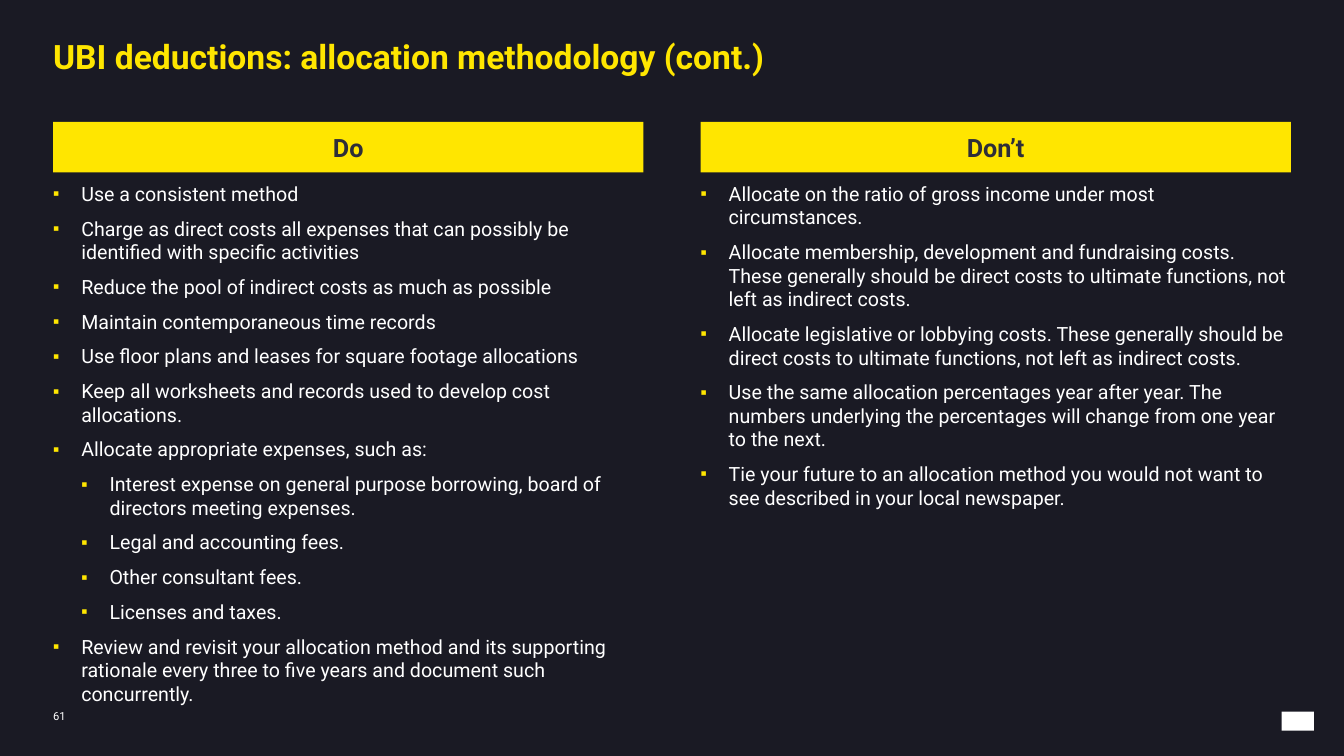
import dataclasses

import pptx
import pptx.dml.color
import pptx.enum.shapes
import pptx.enum.text
import pptx.util
from lxml import etree

ANCHOR = pptx.enum.text.MSO_ANCHOR
ALIGN = pptx.enum.text.PP_ALIGN


@dataclasses.dataclass(frozen=True)
class Theme:
    """Colours, font and type sizes of the deck."""
    background: str = "1A1A24"
    accent: str = "FFE600"
    dark: str = "2E2E38"
    light: str = "FFFFFF"
    font: str = "Roboto"
    title: int = 24
    heading: int = 18
    body: int = 14
    number: int = 8
    spacing: int = 4
    indent: float = 0.28
    bullet_percent: int = 80


@dataclasses.dataclass(frozen=True)
class Box:
    """A region in percent of the slide's width and height."""
    left: float
    top: float
    width: float
    height: float

    def emu(self, prs):
        """Return left, top, width and height in slide units."""
        w, h = prs.slide_width / 100, prs.slide_height / 100
        return [round(v) for v in (self.left * w, self.top * h, self.width * w, self.height * h)]


THEME = Theme()
CONTENT = Box(3.95, 16.13, 92.09, 72)
COLUMN_WIDTH = 43.92
HEADING_HEIGHT = 6.67
BODY_OFFSET = 7.92

TITLE = "UBI deductions: allocation methodology (cont.)"
DO = [
    (0, "Use a consistent method"),
    (0, "Charge as direct costs all expenses that can possibly be identified with specific activities"),
    (0, "Reduce the pool of indirect costs as much as possible"),
    (0, "Maintain contemporaneous time records"),
    (0, "Use floor plans and leases for square footage allocations"),
    (0, "Keep all worksheets and records used to develop cost allocations."),
    (0, "Allocate appropriate expenses, such as:"),
    (1, "Interest expense on general purpose borrowing, board of directors meeting expenses."),
    (1, "Legal and accounting fees."),
    (1, "Other consultant fees."),
    (1, "Licenses and taxes."),
    (0, "Review and revisit your allocation method and its supporting rationale every three to five "
        "years and document such concurrently."),
]
DONT = [
    (0, "Allocate on the ratio of gross income under most circumstances."),
    (0, "Allocate membership, development and fundraising costs. These generally should be direct "
        "costs to ultimate functions, not left as indirect costs."),
    (0, "Allocate legislative or lobbying costs. These generally should be direct costs to ultimate "
        "functions, not left as indirect costs."),
    (0, "Use the same allocation percentages year after year. The numbers underlying the percentages "
        "will change from one year to the next."),
    (0, "Tie your future to an allocation method you would not want to see described in your local "
        "newspaper."),
]


def rgb(value):
    """Return a colour object for a hex string."""
    return pptx.dml.color.RGBColor.from_string(value)


def set_frame(tf, inset=0.0, anchor=ANCHOR.TOP):
    """Set wrapping, insets and anchor of a text frame."""
    tf.word_wrap = True
    tf.auto_size = pptx.enum.text.MSO_AUTO_SIZE.NONE
    tf.vertical_anchor = anchor
    tf.margin_left = tf.margin_right = tf.margin_top = tf.margin_bottom = pptx.util.Inches(inset)


def add_run(p, text, size, color, bold=False):
    """Add one formatted run to a paragraph."""
    r = p.add_run()
    r.text = text
    r.font.name = THEME.font
    r.font.size = pptx.util.Pt(size)
    r.font.bold = bold
    r.font.color.rgb = rgb(color)


def set_bullet(p, level):
    """Give a paragraph a square accent bullet and a hanging indent."""
    p.level = level
    pPr = p._p.get_or_add_pPr()
    pPr.set("marL", str(pptx.util.Inches(THEME.indent * (level + 1))))
    pPr.set("indent", str(-pptx.util.Inches(THEME.indent)))
    ns = pptx.oxml.ns.qn
    color = etree.SubElement(pPr, ns("a:buClr"))
    etree.SubElement(color, ns("a:srgbClr"), val=THEME.accent)
    etree.SubElement(pPr, ns("a:buSzPct"), val=str(THEME.bullet_percent * 1000))
    etree.SubElement(pPr, ns("a:buFont"), typeface=THEME.font)
    etree.SubElement(pPr, ns("a:buChar"), char="▪")


def add_title(prs, s, box, text):
    """Place the title placeholder in its box."""
    sp = s.shapes.title
    sp.left, sp.top, sp.width, sp.height = box.emu(prs)
    set_frame(sp.text_frame)
    p = sp.text_frame.paragraphs[0]
    p.alignment = ALIGN.LEFT
    p.line_spacing = 0.85
    add_run(p, text, THEME.title, THEME.accent, True)


def add_bar(prs, s, box, color):
    """Draw a plain filled rectangle and return it."""
    sp = s.shapes.add_shape(pptx.enum.shapes.MSO_SHAPE.RECTANGLE, *box.emu(prs))
    sp.shadow.inherit = False
    sp.fill.solid()
    sp.fill.fore_color.rgb = rgb(color)
    sp.line.fill.background()
    return sp


def add_heading(prs, s, box, text):
    """Draw the filled bar above a column."""
    tf = add_bar(prs, s, box, THEME.accent).text_frame
    set_frame(tf, 0.1, ANCHOR.MIDDLE)
    p = tf.paragraphs[0]
    p.alignment = ALIGN.CENTER
    add_run(p, text, THEME.heading, THEME.dark, True)


def add_bullets(prs, s, box, items):
    """Write a bulleted list of (level, text) items."""
    tf = s.shapes.add_textbox(*box.emu(prs)).text_frame
    set_frame(tf)
    for i, (level, text) in enumerate(items):
        p = tf.add_paragraph() if i else tf.paragraphs[0]
        set_bullet(p, level)
        p.space_before = pptx.util.Pt(THEME.spacing if i else 0)
        p.space_after = pptx.util.Pt(THEME.spacing)
        add_run(p, text, THEME.body, THEME.light)


def add_column(prs, s, box, heading, items):
    """Stack a heading bar and its list inside a box."""
    add_heading(prs, s, Box(box.left, box.top, box.width, HEADING_HEIGHT), heading)
    body = Box(box.left, box.top + BODY_OFFSET, box.width, box.height - BODY_OFFSET)
    add_bullets(prs, s, body, items)


def add_page_number(prs, s, box, number):
    """Write the page number in its box."""
    tf = s.shapes.add_textbox(*box.emu(prs)).text_frame
    set_frame(tf)
    add_run(tf.paragraphs[0], number, THEME.number, THEME.light)


def add_comparison_slide(prs, title, columns, number):
    """Build a slide with a title and evenly spread columns."""
    s = prs.slides.add_slide(prs.slide_layouts[5])
    s.background.fill.solid()
    s.background.fill.fore_color.rgb = rgb(THEME.background)
    add_title(prs, s, Box(CONTENT.left, 5.6, CONTENT.width, 9.33), title)
    step = (CONTENT.width - COLUMN_WIDTH) / (len(columns) - 1)
    for i, (heading, items) in enumerate(columns):
        box = Box(CONTENT.left + i * step, CONTENT.top, COLUMN_WIDTH, CONTENT.height)
        add_column(prs, s, box, heading, items)
    add_page_number(prs, s, Box(CONTENT.left, 93.87, 4.2, 1.73), number)
    add_bar(prs, s, Box(95.35, 94.13, 2.4, 2.53), THEME.light)


def main():
    """Create the deck and save it."""
    prs = pptx.Presentation()
    prs.slide_width = pptx.util.Inches(13.33)
    prs.slide_height = pptx.util.Inches(7.5)
    add_comparison_slide(prs, TITLE, [("Do", DO), ("Don’t", DONT)], "61")
    prs.save("out.pptx")


if __name__ == "__main__":
    main()
